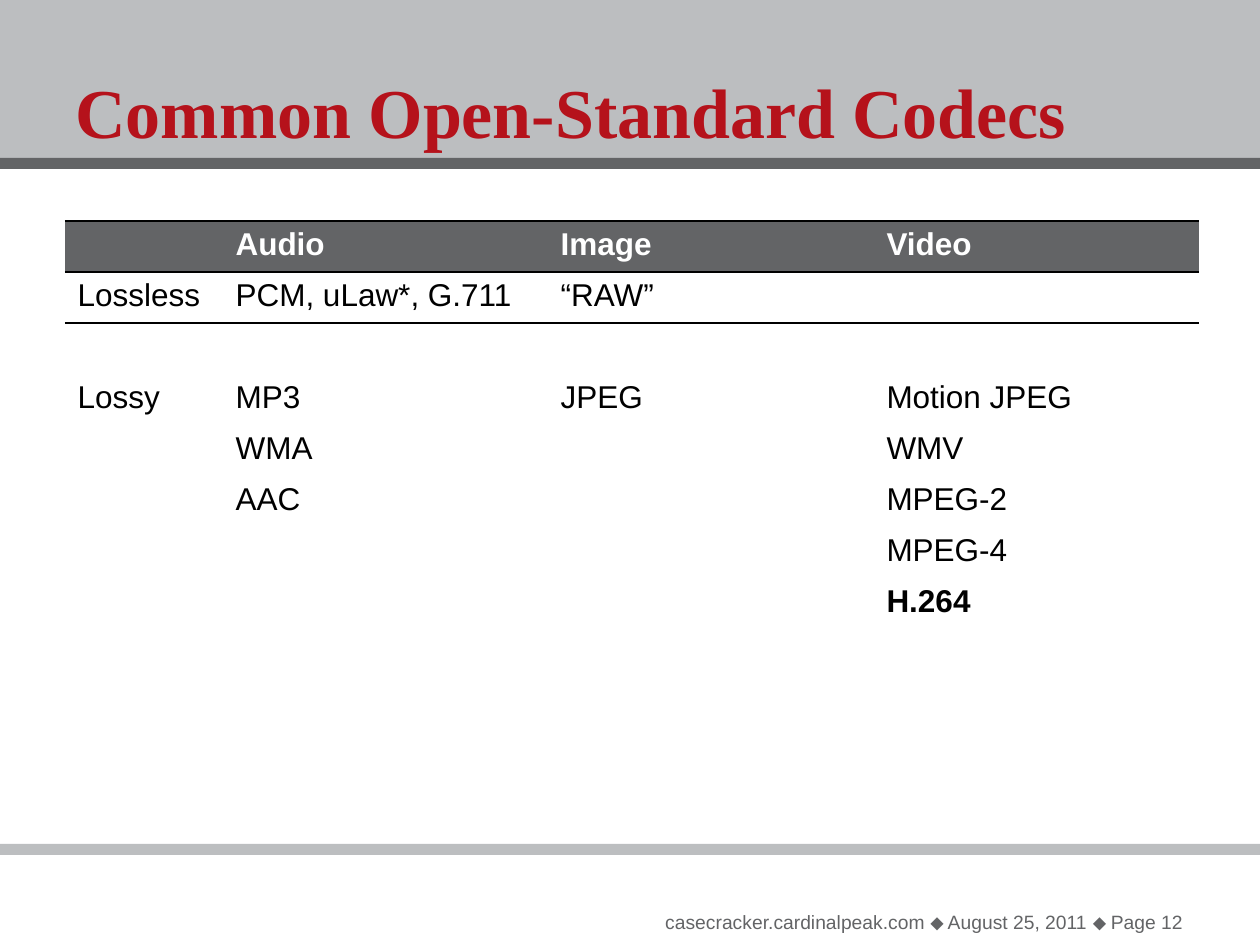
from lxml import etree
from pptx import Presentation
from pptx import util as u
from pptx.dml.color import RGBColor
from pptx.enum import shapes, text
from pptx.oxml import ns

EMU_PER_PX = 914400 / 126
WIDTH, HEIGHT = 1260, 945
COLORS = {
    "red": "B5121B",
    "silver": "BCBEC0",
    "slate": "636466",
    "white": "FFFFFF",
    "black": "000000",
}
BODY_FONT, TITLE_FONT = "Arial", "Times New Roman"
PLAIN_TABLE_STYLE = "{2D5ABB26-0587-4C30-8999-92F81FD0307C}"

CODECS = [
    ["", "Audio", "Image", "Video"],
    ["Lossless", "PCM, uLaw*, G.711", "“RAW”", ""],
    ["", "", "", ""],
    ["Lossy", "MP3", "JPEG", "Motion JPEG"],
    ["", "WMA", "", "WMV"],
    ["", "AAC", "", "MPEG-2"],
    ["", "", "", "MPEG-4"],
    ["", "", "", "H.264"],
]


def px(length):
    return u.Emu(round(length * EMU_PER_PX))


def color(name):
    return RGBColor.from_string(COLORS[name])


class SlideBuilder:
    def __init__(self, presentation):
        self.slide = presentation.slides.add_slide(presentation.slide_layouts[6])

    def style(self, paragraph, size, color_name, font=BODY_FONT, bold=False):
        paragraph.font.name = font
        paragraph.font.size = u.Pt(size)
        paragraph.font.bold = bold
        paragraph.font.color.rgb = color(color_name)
        for run in paragraph.runs:
            run.font.name = font
            run.font.size = u.Pt(size)
            run.font.bold = bold
            run.font.color.rgb = color(color_name)

    def band(self, top, height, color_name):
        """Add a full-width horizontal bar."""
        shape = self.slide.shapes.add_shape(
            shapes.MSO_SHAPE.RECTANGLE, 0, px(top), px(WIDTH), px(height))
        shape.shadow.inherit = False
        shape.fill.solid()
        shape.fill.fore_color.rgb = color(color_name)
        shape.line.fill.background()

    def label(self, words, box, size, color_name, align=text.PP_ALIGN.LEFT, **style):
        shape = self.slide.shapes.add_textbox(*map(px, box))
        frame = shape.text_frame
        frame.word_wrap = True
        frame.vertical_anchor = text.MSO_ANCHOR.MIDDLE
        frame.text = words
        paragraph = frame.paragraphs[0]
        paragraph.alignment = align
        self.style(paragraph, size, color_name, **style)

    def border(self, cell, sides):
        """Draw a 1 pt black line on the given sides, in T, B order."""
        properties = cell._tc.get_or_add_tcPr()
        for index, side in enumerate(sides):
            line = etree.Element(ns.qn(f"a:ln{side}"), w=str(u.Pt(1)))
            fill = etree.SubElement(line, ns.qn("a:solidFill"))
            etree.SubElement(fill, ns.qn("a:srgbClr"), val=COLORS["black"])
            properties.insert(index, line)

    def table(self, rows, left, top, widths, row_height, bold_words):
        """Add a table with a dark header row and plain white body rows."""
        frame = self.slide.shapes.add_table(
            len(rows), len(widths), px(left), px(top),
            px(sum(widths)), px(row_height * len(rows)))
        table = frame.table
        table.horz_banding = False
        table._tbl.tblPr.find(ns.qn("a:tableStyleId")).text = PLAIN_TABLE_STYLE
        for column, width in zip(table.columns, widths):
            column.width = px(width)
        for row_index, words_in_row in enumerate(rows):
            table.rows[row_index].height = px(row_height)
            header = row_index == 0
            for column_index, words in enumerate(words_in_row):
                cell = table.cell(row_index, column_index)
                cell.text_frame.text = words
                self.style(cell.text_frame.paragraphs[0], 18,
                           "white" if header else "black",
                           bold=header or words in bold_words)
                cell.fill.solid()
                cell.fill.fore_color.rgb = color("slate" if header else "white")
                if row_index < 2:
                    self.border(cell, "TB" if header else "T")


def main():
    presentation = Presentation()
    presentation.slide_width, presentation.slide_height = px(WIDTH), px(HEIGHT)
    builder = SlideBuilder(presentation)
    builder.band(0, 158, "silver")
    builder.band(158, 11, "slate")
    builder.band(844, 11, "silver")
    builder.label("casecracker.cardinalpeak.com ⬥ August 25, 2011 ⬥ Page 12",
                  (598, 903, 598, 37), 11, "slate", align=text.PP_ALIGN.RIGHT)
    builder.label("Common Open-Standard Codecs", (63, 63, 1134, 95), 40, "red",
                  font=TITLE_FONT, bold=True)
    builder.table(CODECS, 65, 221, [158, 325, 326, 325], 51, bold_words={"H.264"})
    presentation.save("out.pptx")


if __name__ == "__main__":
    main()
